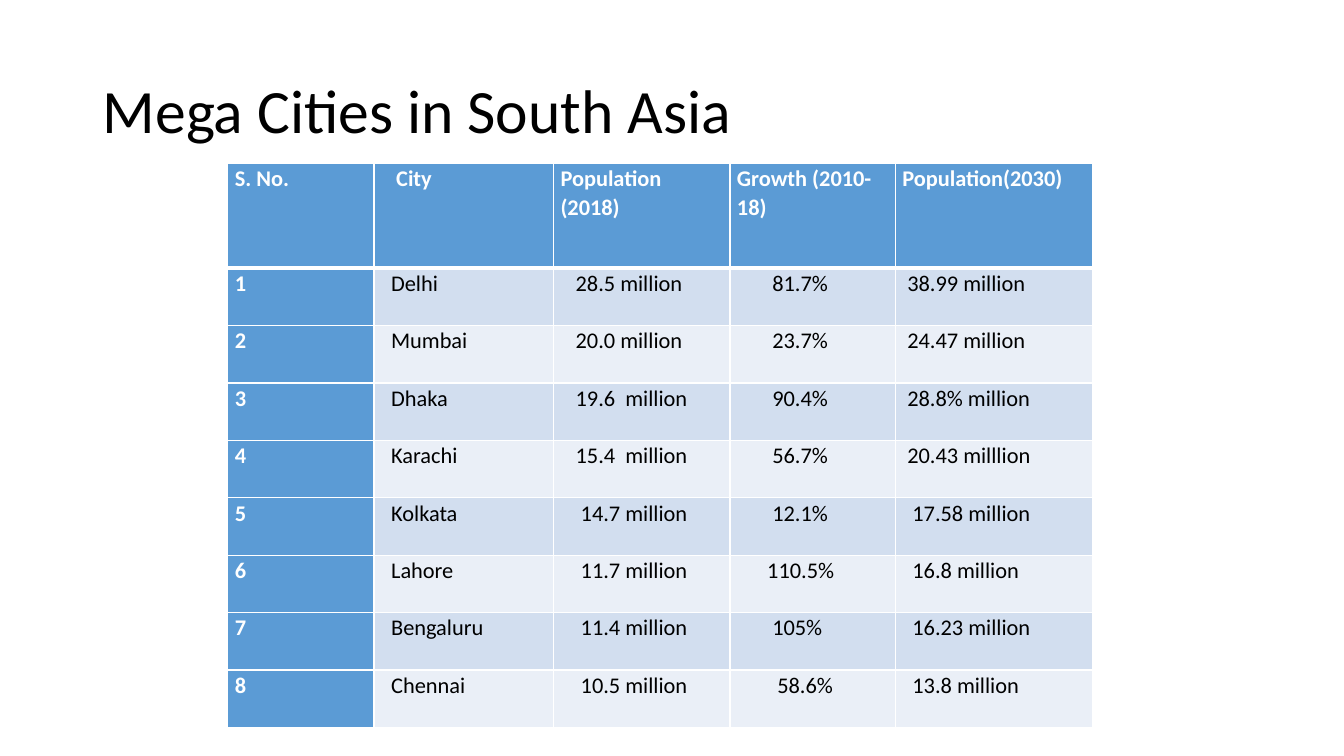
import pptx
import pptx.util
import pptx.dml.color
import pptx.enum.text
import pptx.oxml
import pptx.oxml.ns
from pptx.util import Inches

RGBColor = pptx.dml.color.RGBColor
BLACK = RGBColor(0x00, 0x00, 0x00)
WHITE = RGBColor(0xFF, 0xFF, 0xFF)
BLUE = RGBColor(0x5B, 0x9B, 0xD5)
BAND_DARK = RGBColor(0xD2, 0xDE, 0xEF)
BAND_LIGHT = RGBColor(0xEA, 0xEF, 0xF7)

COL_WIDTHS = [1.45, 1.78, 1.75, 1.64, 1.96]
ROW_HEIGHTS = [1.04] + [0.57] * 8
PAD = 0.07      # cell side margin
STEP = 0.05     # one unit of text indent

# Each row: cell texts, then the indent units of each cell
CITY_ROWS = [
    (["S. No.", "City", "Population (2018)", "Growth (2010-18)", "Population(2030)"], [0, 3, 0, 0, 0]),
    (["1", "Delhi", "28.5 million", "81.7%", "38.99 million"], [0, 2, 3, 7, 1]),
    (["2", "Mumbai", "20.0 million", "23.7%", "24.47 million"], [0, 2, 3, 7, 1]),
    (["3", "Dhaka", "19.6  million", "90.4%", "28.8% million"], [0, 2, 3, 7, 1]),
    (["4", "Karachi", "15.4  million", "56.7%", "20.43 milllion"], [0, 2, 3, 7, 1]),
    (["5", "Kolkata", "14.7 million", "12.1%", "17.58 million"], [0, 2, 4, 7, 2]),
    (["6", "Lahore", "11.7 million", "110.5%", "16.8 million"], [0, 2, 4, 6, 2]),
    (["7", "Bengaluru", "11.4 million", "105%", "16.23 million"], [0, 2, 4, 7, 2]),
    (["8", "Chennai", "10.5 million", "58.6%", "13.8 million"], [0, 2, 4, 8, 2]),
]


class Deck:
    font = "Calibri"

    def __init__(self):
        self.prs = pptx.Presentation()
        self.prs.slide_width = Inches(13.33)
        self.prs.slide_height = Inches(7.5)
        self.s = self.prs.slides.add_slide(self.prs.slide_layouts[5])

    def style(self, p, size, color, spacing, bold=False):
        p.line_spacing = spacing
        p.alignment = pptx.enum.text.PP_ALIGN.LEFT
        p.font.name = self.font
        p.font.size = pptx.util.Pt(size)
        p.font.bold = bold
        p.font.color.rgb = color

    def title(self, text, x, y, w, h):
        sp = self.s.shapes.title
        sp.left, sp.top, sp.width, sp.height = map(Inches, (x, y, w, h))
        tf = sp.text_frame
        tf.text = text
        tf.word_wrap = True
        tf.auto_size = pptx.enum.text.MSO_AUTO_SIZE.NONE
        tf.vertical_anchor = pptx.enum.text.MSO_ANCHOR.MIDDLE
        self.style(tf.paragraphs[0], 44, BLACK, 0.9)

    def border(self, cell, side, points):
        ns = pptx.oxml.ns.nsdecls("a")
        width = pptx.util.Pt(points)
        ln = pptx.oxml.parse_xml(
            f'<a:ln{side} {ns} w="{width}"><a:solidFill>'
            f'<a:srgbClr val="{WHITE}"/></a:solidFill></a:ln{side}>')
        cell._tc.get_or_add_tcPr().append(ln)

    def cell(self, cell, text, indent, row, col):
        # Borders go before the fill; the rule under the header is thicker
        for side in "LRTB":
            thick = (row, side) in ((0, "B"), (1, "T"))
            self.border(cell, side, 3 if thick else 1)
        heading = row == 0 or col == 0
        cell.fill.solid()
        cell.fill.fore_color.rgb = BLUE if heading else BAND_DARK if row % 2 else BAND_LIGHT
        cell.margin_left = Inches(PAD + indent * STEP)
        cell.margin_right = Inches(PAD)
        cell.margin_top = cell.margin_bottom = 0
        cell.text = text
        self.style(cell.text_frame.paragraphs[0], 16, WHITE if heading else BLACK, 1.07, heading)

    def table(self, rows, x, y, widths, heights):
        frame = self.s.shapes.add_table(len(rows), len(widths), Inches(x), Inches(y),
                                        Inches(sum(widths)), Inches(sum(heights)))
        table = frame.table
        table.first_col = True
        for column, width in zip(table.columns, widths):
            column.width = Inches(width)
        for row, height in zip(table.rows, heights):
            row.height = Inches(height)
        for r, (texts, indents) in enumerate(rows):
            for c, (text, indent) in enumerate(zip(texts, indents)):
                self.cell(table.cell(r, c), text, indent, r, c)


def main():
    deck = Deck()
    # Title
    deck.title("Mega Cities in South Asia", 0.92, 0.4, 11.5, 1.45)
    # City table
    deck.table(CITY_ROWS, 2.26, 1.62, COL_WIDTHS, ROW_HEIGHTS)
    deck.prs.save("out.pptx")


if __name__ == "__main__":
    main()
